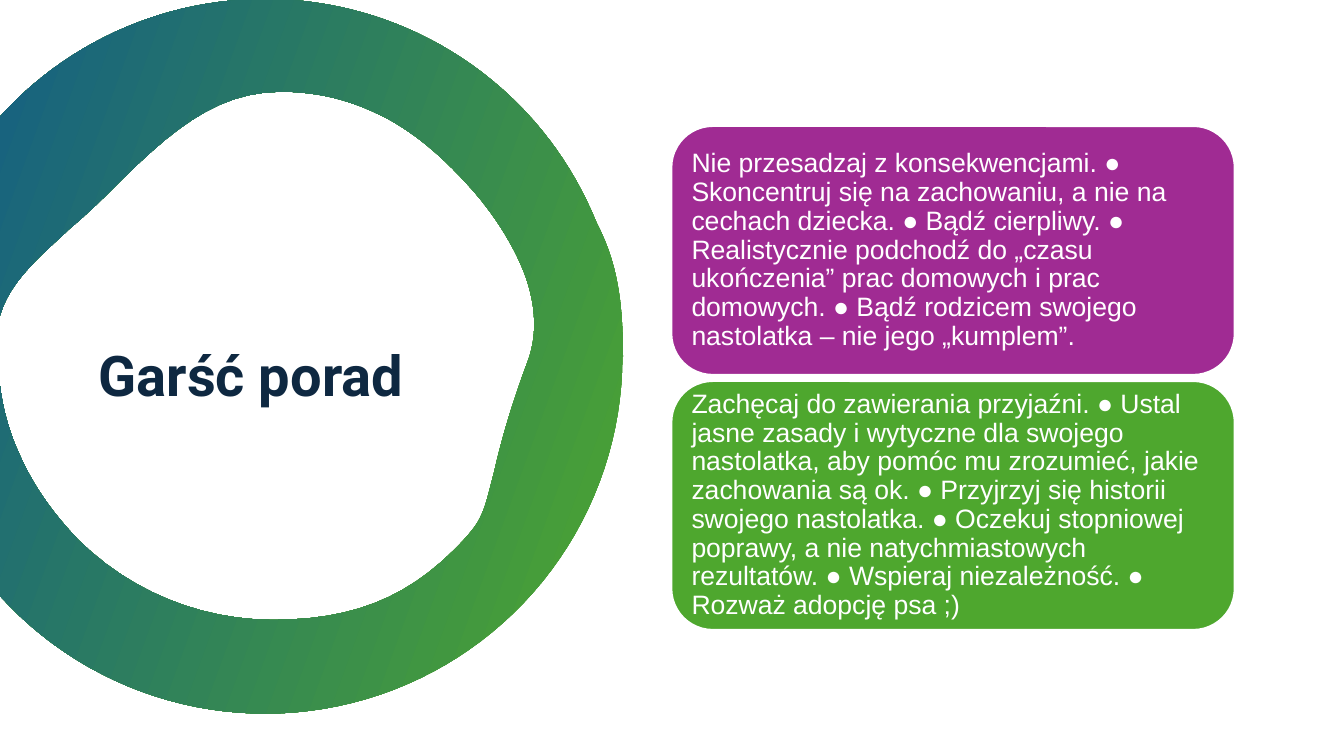
from math import acos, cos, pi, radians, sin

from pptx import Presentation
from pptx.dml.color import RGBColor
from pptx.enum.shapes import MSO_SHAPE
from pptx.enum.text import MSO_ANCHOR, PP_ALIGN
from pptx.util import Pt

TITLE = "Garść porad"
TIPS = [
    ("Nie przesadzaj z konsekwencjami. ● Skoncentruj się na zachowaniu, a nie na cechach dziecka. "
     "● Bądź cierpliwy. ● Realistycznie podchodź do „czasu ukończenia” prac domowych i prac domowych. "
     "● Bądź rodzicem swojego nastolatka – nie jego „kumplem”.", "A02B93"),
    ("Zachęcaj do zawierania przyjaźni. ● Ustal jasne zasady i wytyczne dla swojego nastolatka, "
     "aby pomóc mu zrozumieć, jakie zachowania są ok. ● Przyjrzyj się historii swojego nastolatka. "
     "● Oczekuj stopniowej poprawy, a nie natychmiastowych rezultatów. ● Wspieraj niezależność. "
     "● Rozważ adopcję psa ;)", "4EA72E"),
]
THEME = {
    "title_font": "Roboto", "title_size": 40, "title_color": "0E2841",
    "tip_font": "Arial", "tip_size": 19, "tip_color": "FFFFFF",
    "card_line": "FFFFFF", "ring_colors": ("4EA72E", "156082"), "ring_angle": 160,
    "line_spacing": 0.9,
}

SLIDE_SIZE = (960, 540)
TITLE_BOX = (63.36, 159.12, 288, 221.76)
CARD_LEFT, CARD_TOP, CARD_WIDTH, CARD_HEIGHT = 479.52, 90, 402.48, 177.84
CARD_STEP = 182.16
CARD_MARGIN = 5.76

RING_X, RING_Y, RING_RADIUS = 189.36, 254.52, 255.24
RING_BULGE = (439, 184, 445, 209, 445, RING_Y)
BULGE_ANGLE = radians(-22)
HOLE_UNIT = 0.72
HOLE_START = (0, 383)
HOLE_CURVES = [
    (3, 406, 9, 428, 18, 448), (32, 481, 53, 510, 78, 536),
    (130, 587, 199, 615, 271, 615), (348, 615, 402, 594, 451, 545),
    (468, 528, 474, 519, 477, 512), (482, 502, 485, 488, 490, 469),
    (496, 443, 505, 408, 523, 360), (533, 334, 532, 306, 522, 276),
    (512, 248, 494, 218, 470, 190), (441, 157, 413, 133, 383, 117),
    (350, 100, 317, 91, 279, 91), (212, 91, 166, 133, 108, 191),
    (95, 204, 82, 216, 69, 227), (46, 249, 10, 277, 0, 313),
]
ARC_STEPS = 60
CURVE_STEPS = 12


def arc(first, last):
    angles = [first + (last - first) * step / ARC_STEPS for step in range(ARC_STEPS + 1)]
    return [(RING_X + RING_RADIUS * cos(a), RING_Y + RING_RADIUS * sin(a)) for a in angles]


def cubic(p0, p1, p2, p3, t):
    u = 1 - t
    return u**3 * p0 + 3 * u**2 * t * p1 + 3 * u * t**2 * p2 + t**3 * p3


def curve(start, controls):
    xs, ys = (start[0], *controls[::2]), (start[1], *controls[1::2])
    times = [step / CURVE_STEPS for step in range(1, CURVE_STEPS + 1)]
    return [(cubic(*xs, t), cubic(*ys, t)) for t in times]


def ring_outline():
    edge_angle = pi - acos(RING_X / RING_RADIUS)
    outer = arc(-edge_angle, BULGE_ANGLE)
    outer += curve(outer[-1], RING_BULGE) + arc(0, edge_angle)
    hole = [HOLE_START]
    for controls in HOLE_CURVES:
        hole += curve(hole[-1], controls)
    return outer + [(x * HOLE_UNIT, y * HOLE_UNIT) for x, y in hole]


def add_ring(slide):
    start, *rest = [(Pt(x), Pt(y)) for x, y in ring_outline()]
    builder = slide.shapes.build_freeform(*start)
    builder.add_line_segments(rest, close=True)
    ring = builder.convert_to_shape()
    ring.shadow.inherit = False
    ring.line.fill.background()
    ring.fill.gradient()
    ring.fill.gradient_angle = THEME["ring_angle"]
    for stop, color in zip(ring.fill.gradient_stops, THEME["ring_colors"]):
        stop.color.rgb = RGBColor.from_string(color)


def write(frame, text, role):
    frame.word_wrap = True
    frame.vertical_anchor = MSO_ANCHOR.MIDDLE
    paragraph = frame.paragraphs[0]
    paragraph.text = text
    paragraph.alignment = PP_ALIGN.LEFT
    paragraph.line_spacing = THEME["line_spacing"]
    paragraph.font.name = THEME[role + "_font"]
    paragraph.font.size = Pt(THEME[role + "_size"])
    paragraph.font.bold = role == "title"
    paragraph.font.color.rgb = RGBColor.from_string(THEME[role + "_color"])


def add_card(cards, index, tip, color):
    card = cards.shapes.add_shape(
        MSO_SHAPE.ROUNDED_RECTANGLE, Pt(CARD_LEFT), Pt(CARD_TOP + index * CARD_STEP),
        Pt(CARD_WIDTH), Pt(CARD_HEIGHT))
    card.shadow.inherit = False
    card.fill.solid()
    card.fill.fore_color.rgb = RGBColor.from_string(color)
    card.line.color.rgb = RGBColor.from_string(THEME["card_line"])
    card.line.width = Pt(1.5)
    frame = card.text_frame
    frame.margin_left = frame.margin_right = Pt(CARD_MARGIN)
    frame.margin_top = frame.margin_bottom = Pt(CARD_MARGIN)
    write(frame, tip, "tip")


def main():
    deck = Presentation()
    deck.slide_width, deck.slide_height = map(Pt, SLIDE_SIZE)
    slide = deck.slides.add_slide(deck.slide_layouts[6])
    add_ring(slide)
    title = slide.shapes.add_textbox(*map(Pt, TITLE_BOX))
    write(title.text_frame, TITLE, "title")
    cards = slide.shapes.add_group_shape()
    for index, (tip, color) in enumerate(TIPS):
        add_card(cards, index, tip, color)
    deck.save("out.pptx")


if __name__ == "__main__":
    main()
